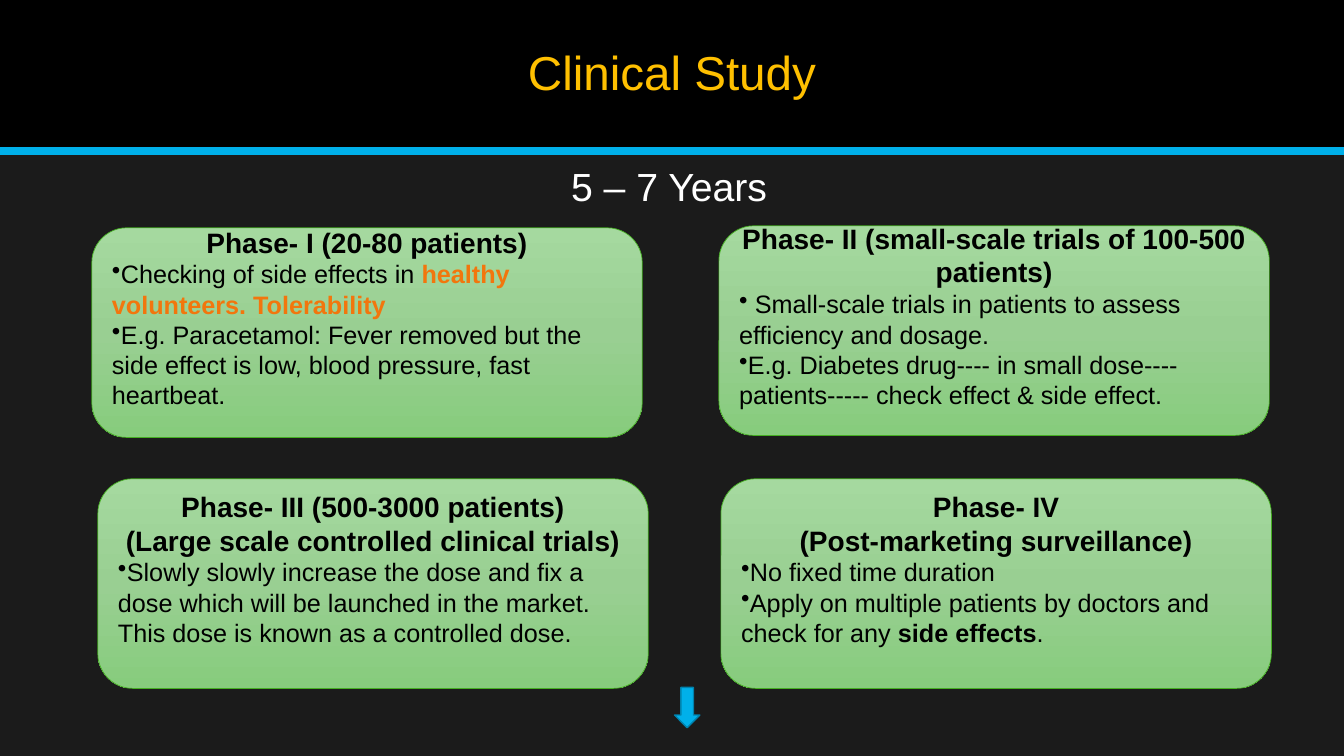
from copy import deepcopy
from dataclasses import dataclass

from lxml.etree import SubElement
from pptx import Presentation
from pptx.dml.color import RGBColor
from pptx.enum.shapes import MSO_CONNECTOR as Connector, MSO_SHAPE as Shape
from pptx.enum.text import MSO_ANCHOR as Anchor, MSO_AUTO_SIZE as AutoSize, PP_ALIGN as Align
from pptx.oxml.ns import qn
from pptx.shapes.autoshape import Shape as AutoShape
from pptx.slide import Slide
from pptx.text.text import _Paragraph as Paragraph, _Run as TextRun
from pptx.util import Inches, Pt


@dataclass(frozen=True)
class Theme:
    font: str = "Arial"
    backdrop: str = "1B1B1B"
    black: str = "000000"
    white: str = "FFFFFF"
    gold: str = "FFC000"
    orange: str = "F2760D"
    blue: str = "00B0EA"
    dark_blue: str = "0082AD"
    green_edge: str = "45AE22"
    greens: tuple[str, ...] = ("A5D99F", "99CF92", "87CC7D")
    title_size: int = 34
    duration_size: int = 28
    heading_size: int = 20
    point_size: int = 18


@dataclass(frozen=True)
class Part:
    text: str
    bold: bool = False
    color: str = Theme.black


@dataclass(frozen=True)
class Phase:
    column: float
    row: float
    headings: tuple[str, ...]
    points: tuple[tuple[Part, ...], ...]


THEME = Theme()
WIDTH, HEIGHT = Inches(13.33), Inches(7.5)
COLUMN, ROW = WIDTH / 100, HEIGHT / 100  # grid of 100 columns by 100 rows
CARD_COLUMNS, CARD_ROWS = 40.96, 27.73
BAND_ROWS = 20

PHASES = (
    Phase(6.83, 30.13, ("Phase- I (20-80 patients)",), (
        (Part("Checking of side effects in "),
         Part("healthy volunteers. Tolerability", True, THEME.orange)),
        (Part("E.g. Paracetamol: Fever removed but the side effect is low, "
              "blood pressure, fast heartbeat."),),
    )),
    Phase(7.28, 63.33, ("Phase- III (500-3000 patients)",
                        "(Large scale controlled clinical trials)"), (
        (Part("Slowly slowly increase the dose and fix a dose which will be launched "
              "in the market. This dose is known as a controlled dose."),),
    )),
    Phase(53.49, 29.87, ("Phase- II (small-scale trials of 100-500 patients)",), (
        (Part(" Small-scale trials in patients to assess efficiency and dosage."),),
        (Part("E.g. Diabetes drug---- in small dose---- patients----- "
              "check effect & side effect."),),
    )),
    Phase(53.64, 63.33, ("Phase- IV", "(Post-marketing surveillance)"), (
        (Part("No fixed time duration"),),
        (Part("Apply on multiple patients by doctors and check for any "),
         Part("side effects", True), Part(".")),
    )),
)


def rgb(value: str) -> RGBColor:
    return RGBColor.from_string(value)


def grid_box(column: float, row: float, columns: float, rows: float) -> tuple[int, ...]:
    """Turn grid units into left, top, width and height."""
    return (round(column * COLUMN), round(row * ROW),
            round(columns * COLUMN), round(rows * ROW))


def style_run(run: TextRun, size: int, color: str, bold: bool = False) -> None:
    run.font.name = THEME.font
    run.font.size = Pt(size)
    run.font.bold = bold
    run.font.color.rgb = rgb(color)


def set_bullet(paragraph: Paragraph, char: str = "") -> None:
    """Place a bullet flush with the text, or none if char is empty."""
    properties = paragraph._p.get_or_add_pPr()
    properties.set("marL", "0")
    properties.set("indent", "0")
    if char:
        SubElement(properties, qn("a:buChar"), char=char)
    else:
        SubElement(properties, qn("a:buNone"))


def add_shape(slide: Slide, kind: Shape, box: tuple[int, ...]) -> AutoShape:
    shape = slide.shapes.add_shape(kind, *box)
    shape.shadow.inherit = False
    return shape


def add_band(slide: Slide) -> None:
    """Draw the black title band and its blue rule behind the placeholders."""
    band = add_shape(slide, Shape.RECTANGLE, grid_box(0, 0, 100, BAND_ROWS))
    band.fill.solid()
    band.fill.fore_color.rgb = rgb(THEME.black)
    band.line.fill.background()
    base = round(BAND_ROWS * ROW)
    rule = slide.shapes.add_connector(Connector.STRAIGHT, 0, base, WIDTH, base)
    rule.line.color.rgb = rgb(THEME.blue)
    rule.line.width = Pt(6)
    SubElement(rule._element.spPr, qn("a:effectLst"))
    for depth, part in enumerate((band, rule), start=2):
        slide.shapes._spTree.insert(depth, part._element)


def fill_placeholder(holder: AutoShape, text: str, box: tuple[int, ...],
                     size: int, color: str, anchor: Anchor) -> Paragraph:
    holder.left, holder.top, holder.width, holder.height = box
    frame = holder.text_frame
    frame.text = text
    frame.auto_size = AutoSize.NONE
    frame.vertical_anchor = anchor
    paragraph = frame.paragraphs[0]
    paragraph.alignment = Align.CENTER
    style_run(paragraph.runs[0], size, color)
    return paragraph


def fill_green(card: AutoShape) -> None:
    card.fill.gradient()
    card.fill.gradient_angle = 270
    first_stop = card._element.spPr.find(".//" + qn("a:gs"))
    first_stop.addnext(deepcopy(first_stop))
    last = len(THEME.greens) - 1
    for index, (stop, green) in enumerate(zip(card.fill.gradient_stops, THEME.greens)):
        stop.position = index / last
        stop.color.rgb = rgb(green)


def add_phase(slide: Slide, phase: Phase) -> None:
    card = add_shape(slide, Shape.ROUNDED_RECTANGLE,
                     grid_box(phase.column, phase.row, CARD_COLUMNS, CARD_ROWS))
    fill_green(card)
    card.line.color.rgb = rgb(THEME.green_edge)
    card.line.width = Pt(0.5)
    frame = card.text_frame
    frame.word_wrap = True
    frame.vertical_anchor = Anchor.MIDDLE
    frame.margin_bottom = Inches(0.35)
    frame.text = "\n".join(phase.headings)
    for heading in frame.paragraphs:
        heading.alignment = Align.CENTER
        style_run(heading.runs[0], THEME.heading_size, THEME.black, bold=True)
    for parts in phase.points:
        point = frame.add_paragraph()
        point.alignment = Align.LEFT
        set_bullet(point, "•")
        for part in parts:
            run = point.add_run()
            run.text = part.text
            style_run(run, THEME.point_size, part.color, part.bold)


def add_next_arrow(slide: Slide) -> None:
    arrow = add_shape(slide, Shape.DOWN_ARROW, grid_box(50.19, 90.93, 1.88, 5.33))
    arrow.fill.solid()
    arrow.fill.fore_color.rgb = rgb(THEME.blue)
    arrow.line.color.rgb = rgb(THEME.dark_blue)
    arrow.line.width = Pt(1)


def main() -> None:
    deck = Presentation()
    deck.slide_width, deck.slide_height = WIDTH, HEIGHT
    slide = deck.slides.add_slide(deck.slide_layouts[1])
    slide.background.fill.solid()
    slide.background.fill.fore_color.rgb = rgb(THEME.backdrop)
    add_band(slide)
    title = fill_placeholder(slide.shapes.title, "Clinical Study", grid_box(0, 1.87, 100, 16),
                             THEME.title_size, THEME.gold, Anchor.MIDDLE)
    title.line_spacing = 0.9
    duration = fill_placeholder(slide.placeholders[1], "5 – 7 Years",
                                grid_box(3.68, 20.8, 92.2, 7.07),
                                THEME.duration_size, THEME.white, Anchor.TOP)
    set_bullet(duration)
    for phase in PHASES:
        add_phase(slide, phase)
    add_next_arrow(slide)
    deck.save("out.pptx")


if __name__ == "__main__":
    main()
